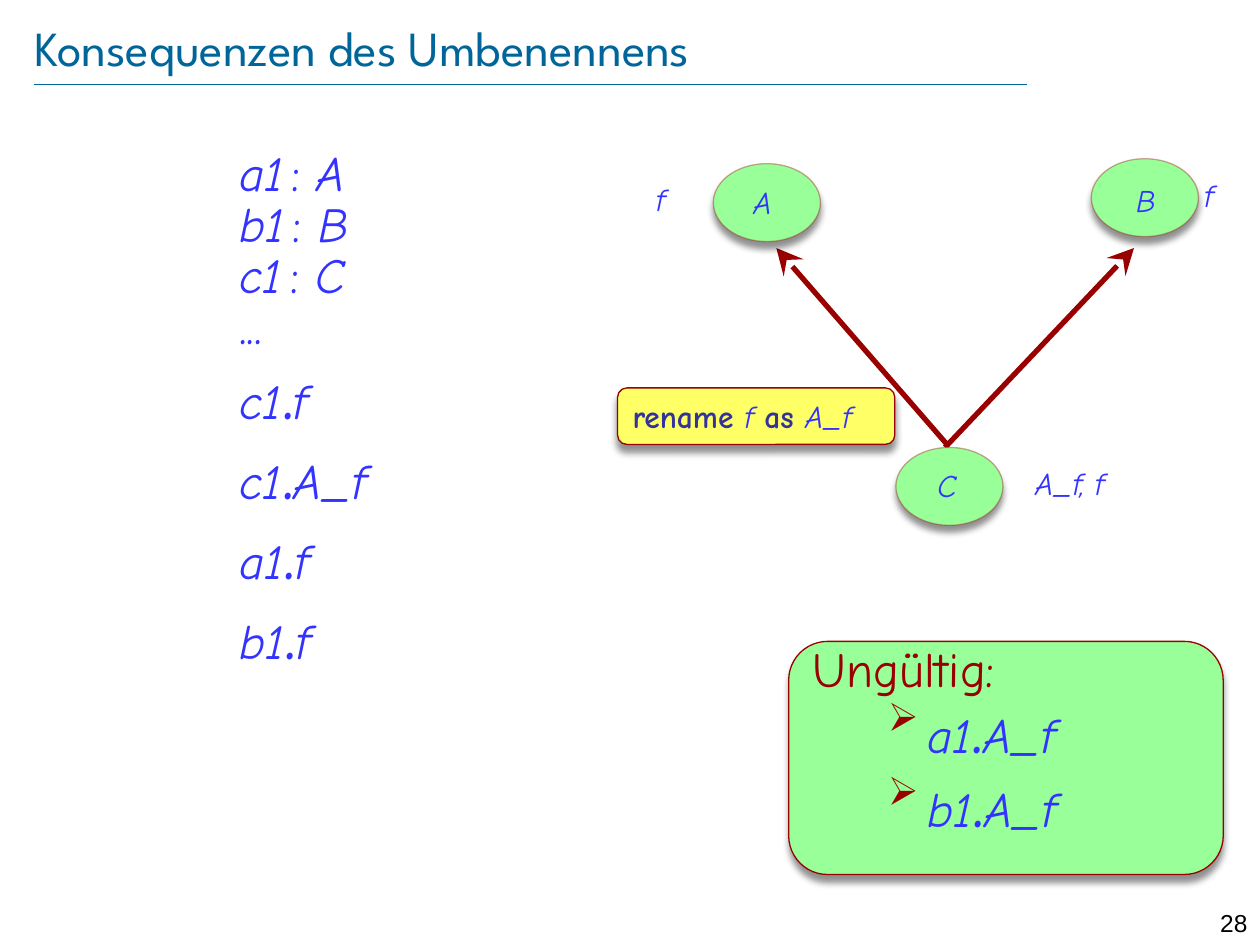
"""Builds the slide on the consequences of renaming inherited features."""
import pptx
import pptx.util
import pptx.dml.color
import pptx.enum.shapes
import pptx.enum.text
import pptx.oxml
import pptx.oxml.ns

Cm, Pt = pptx.util.Cm, pptx.util.Pt
SHAPE = pptx.enum.shapes.MSO_SHAPE
ALIGN = pptx.enum.text.PP_ALIGN
ANCHOR = pptx.enum.text.MSO_ANCHOR
AUTO = pptx.enum.text.MSO_AUTO_SIZE
NS = pptx.oxml.ns.nsdecls("a")

COLORS = {"title": "006699", "code": "3333FF", "keyword": "333399", "red": "990000",
          "green": "99FF99", "yellow": "FFFF66", "black": "000000"}

# style: font, size, colour, bold, italic
STYLES = {
    "title": ("League Spartan", 28, "title", False, False),
    "page": ("Arial", 14, "black", False, False),
    "code": ("Comic Neue", 28, "code", False, True),
    "gap": ("Comic Neue", 14, "code", False, True),
    "plain": ("Comic Neue", 28, "code", False, False),
    "dot": ("Comic Neue", 44, "code", False, False),
    "label": ("Comic Neue", 18, "code", False, True),
    "keyword": ("Comic Neue", 18, "keyword", True, False),
    "heading": ("Comic Neue", 28, "red", False, False),
}

TITLE = "Konsequenzen des Umbenennens"
PAGE = "28"
DECLARATIONS = [("a1", "A"), ("b1", "B"), ("c1", "C")]
CALLS = [("c1", "f"), ("c1", "A_f"), ("a1", "f"), ("b1", "f")]
RENAME = [("rename ", "keyword"), ("f ", "label"), ("as ", "keyword"), ("A_f", "label")]
INVALID_HEADING = "Ungültig:"
INVALID_CALLS = [("a1", "A_f"), ("b1", "A_f")]

ARROWS = [((19.05, 9.02), (22.86, 5)), ((19.1, 8.97), (15.65, 5))]
CLASS_SIZE = (2.16, 1.57)
CLASS_SPOTS = [(18.06, 9.02), (22, 3.2), (14.38, 3.3)]
CLASS_LABELS = [("C", (17.07, 9.27, 4.04, 1.02), ALIGN.CENTER),
                ("A", (14.94, 3.56, 2.77, 1.02), ALIGN.LEFT),
                ("B", (21.64, 3.53, 2.92, 1.02), ALIGN.CENTER)]
FEATURE_LABELS = [("f", (12.98, 3.84, 2.03, 0.71)),
                  ("A_f, f", (20.62, 9.55, 3.12, 0.71)),
                  ("f", (24.03, 3.76, 1.37, 0.71))]


def rgb(name):
    return pptx.dml.color.RGBColor.from_string(COLORS[name])


def add_xml(parent, xml):
    parent.append(pptx.oxml.parse_xml(xml))


def fill_paragraph(p, runs, spacing=None, before=0, align=ALIGN.LEFT):
    p.alignment = align
    if spacing:
        p.line_spacing = spacing
    p.space_before = Pt(before)
    for text, style in runs:
        font, size, color, bold, italic = STYLES[style]
        r = p.add_run()
        r.text = text
        r.font.name, r.font.size = font, Pt(size)
        r.font.bold, r.font.italic = bold, italic
        r.font.color.rgb = rgb(color)


def add_text(slide, box, runs, spacing=None, align=ALIGN.LEFT, auto=AUTO.NONE):
    sp = slide.shapes.add_textbox(*map(Cm, box))
    tf = sp.text_frame
    tf.word_wrap = True
    tf.auto_size = auto
    fill_paragraph(tf.paragraphs[0], runs, spacing, align=align)
    return tf


def add_line(slide, start, end, color, width):
    line = slide.shapes.add_connector(pptx.enum.shapes.MSO_CONNECTOR.STRAIGHT,
                                      *map(Cm, start + end))
    line.line.color.rgb = rgb(color)
    line.line.width = Pt(width)
    add_xml(line._element.spPr, f"<a:effectLst {NS}/>")
    return line


def add_panel(slide, kind, box, fill):
    sp = slide.shapes.add_shape(kind, *map(Cm, box))
    sp.fill.solid()
    sp.fill.fore_color.rgb = rgb(fill)
    sp.line.color.rgb = rgb("red")
    sp.line.width = Pt(0.75)
    add_xml(sp._element.spPr,
            f'<a:effectLst {NS}><a:outerShdw blurRad="{Pt(4)}" dist="{Pt(4)}" dir="5400000" '
            f'rotWithShape="0"><a:srgbClr val="{COLORS["black"]}"><a:alpha val="43000"/>'
            '</a:srgbClr></a:outerShdw></a:effectLst>')
    tf = sp.text_frame
    tf.word_wrap = True
    tf.vertical_anchor = ANCHOR.TOP
    return sp


def call_runs(target, feature):
    return [(target, "code"), (".", "dot"), (feature, "code")]


def add_bullet(p):
    p.level = 1
    pPr = p._p.get_or_add_pPr()
    pPr.set("marL", str(Cm(2.31)))
    pPr.set("indent", str(Cm(-0.79)))
    add_xml(pPr, f'<a:buClr {NS}><a:srgbClr val="{COLORS["red"]}"/></a:buClr>')
    add_xml(pPr, f'<a:buSzPct {NS} val="80000"/>')
    add_xml(pPr, f'<a:buChar {NS} char="➢"/>')


def add_listing(slide):
    lines = [([(name, "code"), (" ", "gap"), (": ", "plain"), (kind, "code")], 5.6)
             for name, kind in DECLARATIONS]
    lines.append(([("...", "plain")], 5.6))
    lines += [(call_runs(*call), 8.8) for call in CALLS]
    tf = add_text(slide, (4.57, 3.07, 6.5, 11.07), lines[0][0], 0.7)
    for runs, before in lines[1:]:
        fill_paragraph(tf.add_paragraph(), runs, 0.7, before)


def add_diagram(slide):
    for start, end in ARROWS:
        line = add_line(slide, start, end, "red", 3)
        add_xml(line.line._get_or_add_ln(),
                f'<a:tailEnd {NS} type="stealth" w="lg" len="lg"/>')
    sp = add_panel(slide, SHAPE.ROUNDED_RECTANGLE, (12.45, 7.82, 5.59, 1.14), "yellow")
    sp.text_frame.auto_size = AUTO.SHAPE_TO_FIT_TEXT
    fill_paragraph(sp.text_frame.paragraphs[0], RENAME)
    for spot in CLASS_SPOTS:
        sp = add_panel(slide, SHAPE.OVAL, spot + CLASS_SIZE, "green")
        color = sp.line._get_or_add_ln().find(".//" + pptx.oxml.ns.qn("a:srgbClr"))
        add_xml(color, f'<a:alpha {NS} val="34000"/>')
    for text, box, align in CLASS_LABELS:
        add_text(slide, box, [(text, "label")], align=align, auto=AUTO.SHAPE_TO_FIT_TEXT)
    for text, box in FEATURE_LABELS:
        add_text(slide, box, [(text, "label")], 0.5, auto=AUTO.SHAPE_TO_FIT_TEXT)


def add_invalid_calls(slide):
    sp = add_panel(slide, SHAPE.ROUNDED_RECTANGLE, (15.9, 12.93, 8.76, 4.7), "green")
    tf = sp.text_frame
    fill_paragraph(tf.paragraphs[0], [(INVALID_HEADING, "heading")], 0.6)
    for call in INVALID_CALLS:
        p = tf.add_paragraph()
        add_bullet(p)
        fill_paragraph(p, call_runs(*call), 0.8)


def main():
    prs = pptx.Presentation()
    prs.slide_width, prs.slide_height = Cm(25.4), Cm(19.05)
    slide = prs.slides.add_slide(prs.slide_layouts[6])
    add_line(slide, (0.69, 1.7), (20.7, 1.7), "title", 0.25)
    add_text(slide, (24, 18.19, 1.4, 0.61), [(PAGE, "page")], align=ALIGN.RIGHT)
    tf = add_text(slide, (0.69, 0.33, 22.07, 1.22), [(TITLE, "title")])
    tf.vertical_anchor = ANCHOR.MIDDLE
    tf.margin_left = tf.margin_right = tf.margin_top = tf.margin_bottom = 0
    add_listing(slide)
    add_diagram(slide)
    add_invalid_calls(slide)
    prs.save("out.pptx")


if __name__ == "__main__":
    main()
